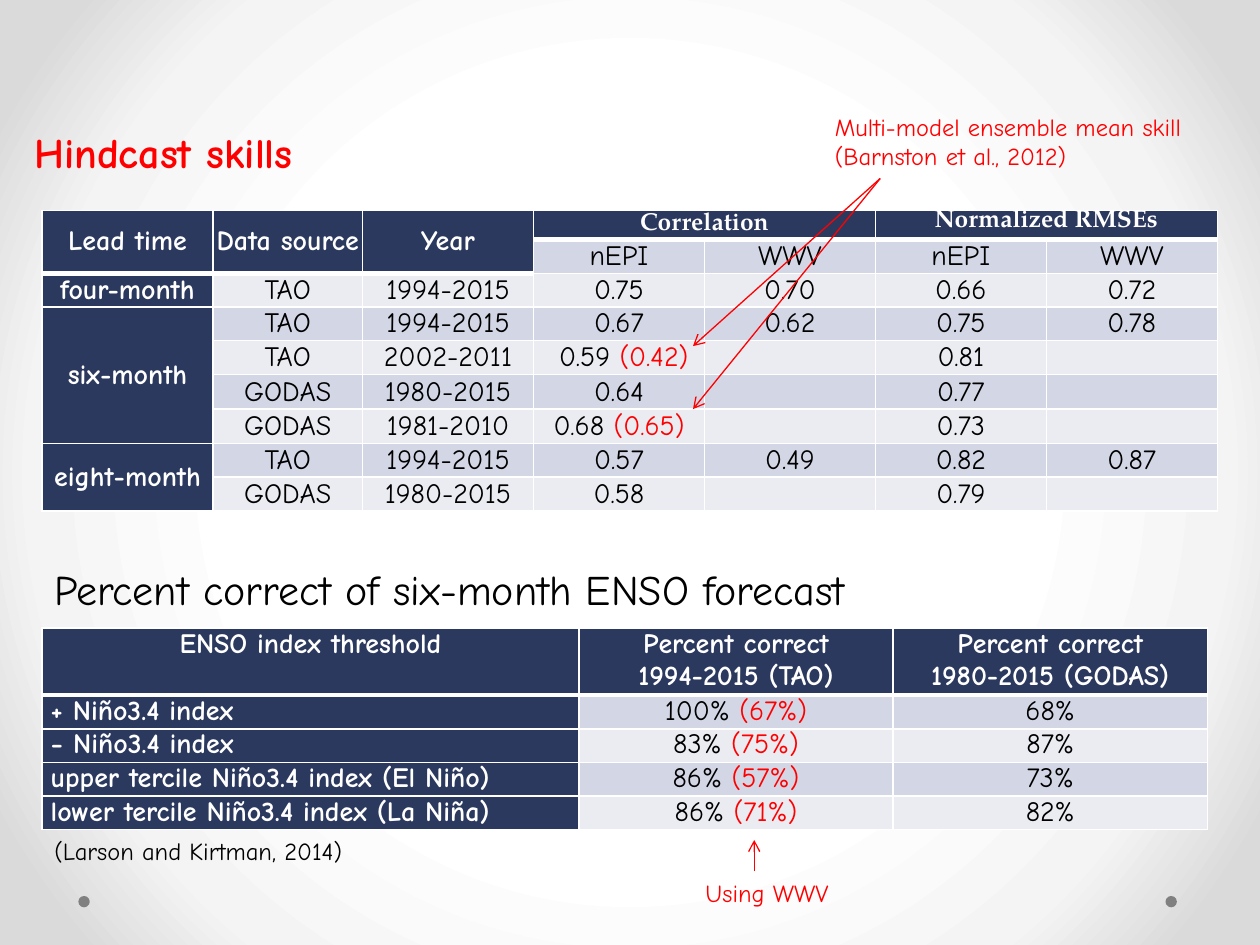
from dataclasses import dataclass
from lxml.etree import SubElement
from pptx import Presentation
from pptx.dml.color import RGBColor
from pptx.enum.shapes import MSO_CONNECTOR, MSO_SHAPE
from pptx.enum.text import MSO_ANCHOR, PP_ALIGN
from pptx.oxml import parse_xml
from pptx.oxml.ns import nsdecls, qn
from pptx.util import Pt


@dataclass(frozen=True)
class Theme:
    """Colours, fonts and type sizes of the slide."""
    navy: str = "2C395E"
    bands: tuple = ("EAECF2", "D2D6E5")
    red: str = "FF0000"
    black: str = "000000"
    white: str = "FFFFFF"
    dot: str = "808080"
    backdrop: tuple = ((50, "FFFFFF"), (76, "F4F4F4"), (92, "DADADA"))
    font: str = "Comic Neue"
    serif: str = "TeX Gyre Pagella"
    title: float = 24
    cell: float = 16
    note: float = 14


THEME = Theme()

SKILL_ROWS = [
    ["Lead time", "Data source", "Year", "Correlation", "", "Normalized RMSEs", ""],
    ["", "", "", "nEPI", "WWV", "nEPI", "WWV"],
    ["four-month", "TAO", "1994-2015", "0.75", "0.70", "0.66", "0.72"],
    ["six-month", "TAO", "1994-2015", "0.67", "0.62", "0.75", "0.78"],
    ["", "TAO", "2002-2011", " 0.59 (0.42)", "", "0.81", ""],
    ["", "GODAS", "1980-2015", "0.64", "", "0.77", ""],
    ["", "GODAS", "1981-2010", "0.68 (0.65)", "", "0.73", ""],
    ["eight-month", "TAO", "1994-2015", "0.57", "0.49", "0.82", "0.87"],
    ["", "GODAS", "1980-2015", "0.58", "", "0.79", ""],
]
SKILL_SPANS = [(0, 0, 1, 0), (0, 1, 1, 1), (0, 2, 1, 2), (0, 3, 0, 4),
               (0, 5, 0, 6), (3, 0, 6, 0), (7, 0, 8, 0)]
FORECAST_ROWS = [
    ["ENSO index threshold", "Percent correct\n1994-2015 (TAO)", "Percent correct\n1980-2015 (GODAS)"],
    ["+ Niño3.4 index", "100% (67%)", "68%"],
    ["− Niño3.4 index", "83% (75%)", "87%"],
    ["upper tercile Niño3.4 index (El Niño)", "86% (57%)", "73%"],
    ["lower tercile Niño3.4 index (La Niña)", "86% (71%)", "82%"],
]


def add_run(paragraph, text, size, color, bold=False, font=THEME.font):
    """Append one formatted run."""
    run = paragraph.add_run()
    run.text = text
    run.font.name = font
    run.font.size = Pt(size)
    run.font.bold = bold
    run.font.color.rgb = RGBColor.from_string(color)


def add_label(slide, box, text, size, color, bold=False, wrap=False):
    """Place a single-paragraph text box."""
    frame = slide.shapes.add_textbox(*map(Pt, box)).text_frame
    frame.word_wrap = wrap
    add_run(frame.paragraphs[0], text, size, color, bold)


def add_arrow(slide, start, end):
    """Draw a thin red line with an open arrowhead at its end."""
    arrow = slide.shapes.add_connector(MSO_CONNECTOR.STRAIGHT, *map(Pt, start + end))
    arrow.line.color.rgb = RGBColor.from_string(THEME.red)
    arrow.line.width = Pt(0.75)
    SubElement(arrow.line._get_or_add_ln(), qn("a:tailEnd"), type="arrow")
    SubElement(arrow._element.spPr, qn("a:effectLst"))


def set_borders(cell, widths):
    """Give a cell white borders, from side name to width."""
    properties = cell._tc.get_or_add_tcPr()
    for side, width in widths.items():
        line = SubElement(properties, qn(f"a:ln{side}"), w=str(Pt(width)))
        fill = SubElement(line, qn("a:solidFill"))
        SubElement(fill, qn("a:srgbClr"), val=THEME.white)


def write_cell(cell, text, heading, dark, alignment, font):
    """Write the lines of a cell, with bracketed body values in red."""
    frame = cell.text_frame
    for index, line in enumerate(text.split("\n")):
        paragraph = frame.add_paragraph() if index else frame.paragraphs[0]
        paragraph.alignment = alignment
        if dark and line:
            add_run(paragraph, line, THEME.note if font == THEME.serif else THEME.cell,
                    THEME.white, True, font)
        elif line:
            value, bracket, reference = line.partition("(")
            add_run(paragraph, value, THEME.cell, THEME.black)
            if bracket:
                add_run(paragraph, bracket + reference, THEME.cell, THEME.red)
        else:
            size = THEME.note if heading else THEME.cell
            SubElement(paragraph._p, qn("a:endParaRPr"), sz=str(int(size * 100)))


def add_grid(slide, box, rows, widths, heights, inset, spans=(), deep_columns=0,
             label_alignment=PP_ALIGN.CENTER, anchor=MSO_ANCHOR.TOP, serif_columns=()):
    """Place a table with dark headings and labels and a banded body."""
    table = slide.shapes.add_table(len(rows), len(widths), *map(Pt, box)).table
    table.first_row = table.horz_banding = False
    for column, width in zip(table.columns, widths):
        column.width = Pt(width)
    for row, height in zip(table.rows, heights):
        row.height = Pt(height)
    for r, values in enumerate(rows):
        for c, text in enumerate(values):
            cell = table.cell(r, c)
            heading = r == 0 or (r == 1 and c < deep_columns)
            dark = heading or c == 0
            cell.margin_left = cell.margin_right = Pt(inset)
            cell.margin_top = cell.margin_bottom = Pt(0)
            cell.vertical_anchor = anchor
            borders = {"L": 1} if c == 0 else {}
            borders["R"] = 1
            if r == 0:
                borders["T"] = 1
            borders["B"] = 3 if heading else 1
            set_borders(cell, borders)
            cell.fill.solid()
            cell.fill.fore_color.rgb = RGBColor.from_string(
                THEME.navy if dark else THEME.bands[r % 2])
            alignment = label_alignment if c == 0 and not heading else PP_ALIGN.CENTER
            font = THEME.serif if r == 0 and c in serif_columns else THEME.font
            write_cell(cell, text, heading, dark, alignment, font)
    for top, left, bottom, right in spans:
        table.cell(top, left).merge(table.cell(bottom, right))
    return table


def add_backdrop(slide):
    """Give the slide a round white-to-grey gradient and two footer dots."""
    stops = "".join(f'<a:gs pos="{place * 1000}"><a:srgbClr val="{color}"/></a:gs>'
                    for place, color in THEME.backdrop)
    slide._element.cSld.insert(0, parse_xml(
        f'<p:bg {nsdecls("p", "a")}><p:bgPr><a:gradFill rotWithShape="1"><a:gsLst>{stops}</a:gsLst>'
        '<a:path path="circle"><a:fillToRect l="50000" t="50000" r="50000" b="50000"/></a:path>'
        '</a:gradFill><a:effectLst/></p:bgPr></p:bg>'))
    for left in (666, 44.8):
        dot = slide.shapes.add_shape(MSO_SHAPE.OVAL, Pt(left), Pt(512), Pt(6.5), Pt(6.5))
        dot.shadow.inherit = False
        dot.fill.solid()
        dot.fill.fore_color.rgb = RGBColor.from_string(THEME.dot)
        dot.line.fill.background()


def add_hindcast(slide, box):
    """Place the hindcast title, skill table and ensemble note."""
    left, top, width, height = box
    table = add_grid(slide, (left, top + 51.4, width, height - 51.4), SKILL_ROWS,
                     [97.7, 85.5] + [97.7] * 5, [16.8] + [19.2] * 8, 1.5, SKILL_SPANS,
                     deep_columns=3, anchor=MSO_ANCHOR.MIDDLE, serif_columns=(3, 5))
    table.cell(0, 5).vertical_anchor = MSO_ANCHOR.TOP
    add_label(slide, (left - 11.6, top, 183.6, 36), "Hindcast skills",
              THEME.title, THEME.red, bold=True)
    add_label(slide, (left + 446, top - 8.5, 228.2, 41),
              "Multi-model ensemble mean skill (Barnston et al., 2012)",
              THEME.note, THEME.red, wrap=True)
    for drop in (129, 165):
        add_arrow(slide, (left + 479, top + 33.2), (left + 372, top + drop))


def add_forecast(slide, box):
    """Place the forecast title, percent table, citation and footnote."""
    left, top, width, height = box
    bottom = top + height
    add_grid(slide, (left, top + 40.5, width, height - 40.5), FORECAST_ROWS,
             [306.8, 179.6, 179.6], [38.4] + [19.2] * 4, 5,
             label_alignment=PP_ALIGN.LEFT)
    add_label(slide, (left, top, 530, 36), "Percent correct of six-month ENSO forecast",
              THEME.title, THEME.black)
    add_label(slide, (left, bottom, 195.8, 24.5), "(Larson and Kirtman, 2014)",
              THEME.note, THEME.black)
    add_label(slide, (left + 372, bottom + 24, 108.7, 24.5), "Using WWV",
              THEME.note, THEME.red, wrap=True)
    add_arrow(slide, (left + 407, bottom + 24), (left + 407, bottom + 6))


def main():
    """Build the slide and save it."""
    presentation = Presentation()
    presentation.slide_width, presentation.slide_height = Pt(720), Pt(540)
    slide = presentation.slides.add_slide(presentation.slide_layouts[6])
    add_backdrop(slide)
    add_hindcast(slide, (24, 68.8, 671.7, 221.8))
    add_forecast(slide, (24, 318.3, 666, 155.7))
    presentation.save("out.pptx")


if __name__ == "__main__":
    main()
